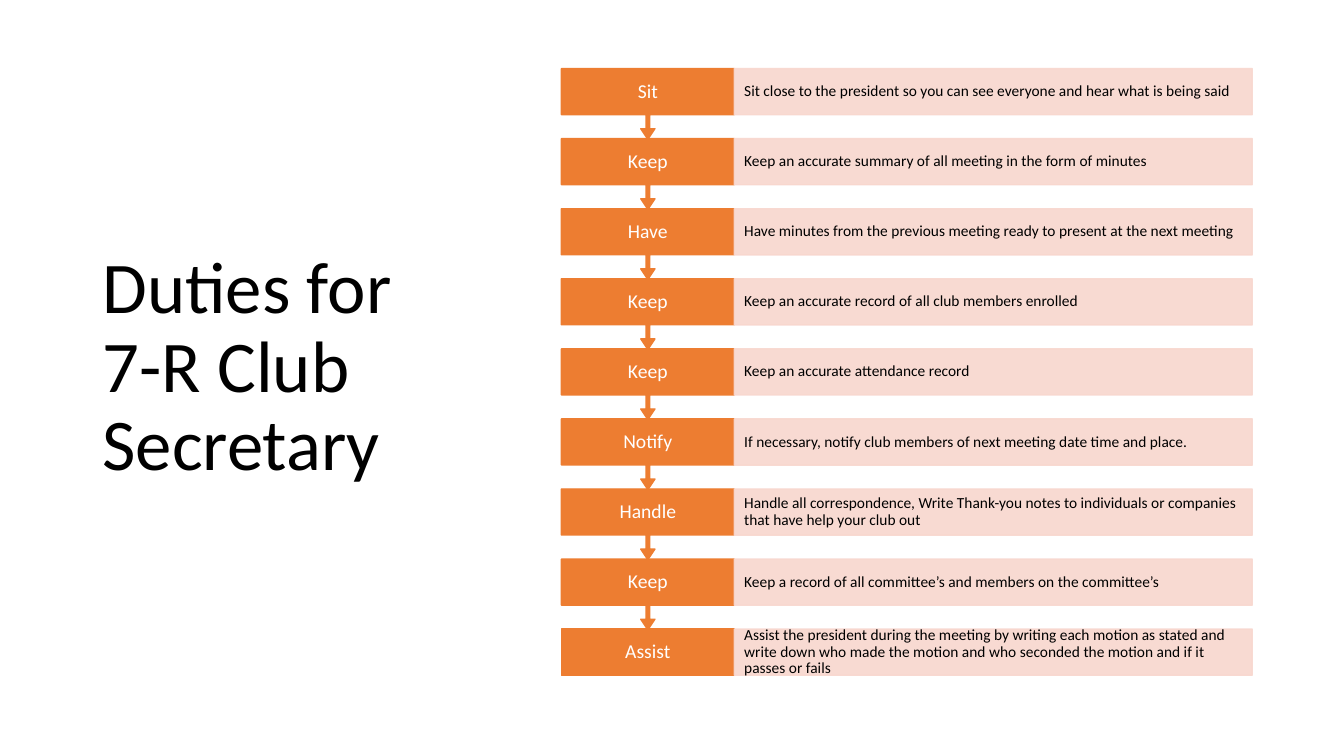
"""Build the slide on the duties of a youth club secretary."""
import pptx
import pptx.dml.color
import pptx.enum.shapes
import pptx.enum.text
import pptx.oxml
import pptx.oxml.ns
import pptx.util

Pt = pptx.util.Pt
RGB = pptx.dml.color.RGBColor.from_string
SHAPE = pptx.enum.shapes.MSO_SHAPE
ALIGN = pptx.enum.text.PP_ALIGN

HEADING = "Duties for 7-R Club Secretary"
DUTIES = [
    ("Sit", "Sit close to the president so you can see everyone and hear what is being said"),
    ("Keep", "Keep an accurate summary of all meeting in the form of minutes"),
    ("Have", "Have minutes from the previous meeting ready to present at the next meeting"),
    ("Keep", "Keep an accurate record of all club members enrolled"),
    ("Keep", "Keep an accurate attendance record"),
    ("Notify", "If necessary, notify club members of next meeting date time and place."),
    ("Handle", "Handle all correspondence, Write Thank-you notes to individuals or companies "
               "that have help your club out"),
    ("Keep", "Keep a record of all committee’s and members on the committee’s"),
    ("Assist", "Assist the president during the meeting by writing each motion as stated and write "
               "down who made the motion and who seconded the motion and if it passes or fails"),
]

THEME = {
    "font": "Calibri",
    "accent": "ED7D31", "tint": "F8D7CE", "tint_alpha": 90,
    "heading": {"size": 52, "color": "000000", "align": ALIGN.LEFT, "margins": (7.2, 3.6)},
    "verb": {"size": 14, "color": "FFFFFF", "align": ALIGN.CENTER, "margins": (8.64, 7.92)},
    "detail": {"size": 11, "color": "000000", "align": ALIGN.LEFT, "margins": (7.2, 10.8)},
}
HEADING_BOX = {"left": 66, "top": 44, "width": 266, "height": 438.5}
VERB_LEFT, VERB_WIDTH = 401, 123.5
DETAIL_LEFT, DETAIL_WIDTH = VERB_LEFT + VERB_WIDTH, 370
FIRST_TOP, PITCH, BOX_HEIGHT = 49, 50.05, 33
CALLOUT_HEIGHT = 50.5
CALLOUT_ADJUSTMENTS = (0.05, 0.1, 0.15, 0.65)


def set_all(target, values):
    """Set every attribute in the dict on the target."""
    for attribute, value in values.items():
        setattr(target, attribute, value)


def write(holder, wording, role):
    """Put wording in a shape, styled by its role in the theme."""
    style = THEME[role]
    side, end = map(Pt, style["margins"])
    frame = holder.text_frame
    frame.text = wording
    set_all(frame, {
        "word_wrap": True, "auto_size": pptx.enum.text.MSO_AUTO_SIZE.NONE,
        "vertical_anchor": pptx.enum.text.MSO_ANCHOR.MIDDLE,
        "margin_left": side, "margin_right": side, "margin_top": end, "margin_bottom": end,
    })
    line = frame.paragraphs[0]
    set_all(line, {"alignment": style["align"], "line_spacing": 0.9})
    font = line.runs[0].font
    set_all(font, {"name": THEME["font"], "size": Pt(style["size"])})
    font.color.rgb = RGB(style["color"])


def add_block(slide, kind, box, color, alpha=100):
    """Add a flat shape with fill and outline in one colour."""
    block = slide.shapes.add_shape(kind, *map(Pt, box))
    block.shadow.inherit = False
    block.fill.solid()
    block.line.width = Pt(1)
    for paint in (block.fill.fore_color, block.line.color):
        paint.rgb = RGB(color)
    if alpha < 100:
        for tone in block.element.spPr.iter(pptx.oxml.ns.qn("a:srgbClr")):
            opacity = pptx.oxml.parse_xml(
                f'<a:alpha {pptx.oxml.ns.nsdecls("a")} val="{alpha * 1000}"/>')
            tone.append(opacity)
    return block


def add_duty(slide, index, verb, sentence):
    """Add one row: the verb with its arrow to the next row, and the sentence."""
    top = FIRST_TOP + index * PITCH
    verb_box = (VERB_LEFT, top, VERB_WIDTH, BOX_HEIGHT)
    if index == len(DUTIES) - 1:
        label = add_block(slide, SHAPE.RECTANGLE, verb_box, THEME["accent"])
    else:
        callout = add_block(slide, SHAPE.UP_ARROW_CALLOUT,
                            (VERB_LEFT, top, VERB_WIDTH, CALLOUT_HEIGHT), THEME["accent"])
        callout.rotation = 180
        for position, value in enumerate(CALLOUT_ADJUSTMENTS):
            callout.adjustments[position] = value
        label = slide.shapes.add_textbox(*map(Pt, verb_box))
    write(label, verb, "verb")
    detail = add_block(slide, SHAPE.RECTANGLE, (DETAIL_LEFT, top, DETAIL_WIDTH, BOX_HEIGHT),
                       THEME["tint"], THEME["tint_alpha"])
    write(detail, sentence, "detail")


def main():
    """Create the presentation and save it."""
    deck = pptx.Presentation()
    set_all(deck, {"slide_width": Pt(960), "slide_height": Pt(540)})
    slide = deck.slides.add_slide(deck.slide_layouts.get_by_name("Title Only"))
    heading = slide.shapes.title
    set_all(heading, {side: Pt(length) for side, length in HEADING_BOX.items()})
    write(heading, HEADING, "heading")
    for index, (verb, sentence) in reversed(list(enumerate(DUTIES))):
        add_duty(slide, index, verb, sentence)
    deck.save("out.pptx")


if __name__ == "__main__":
    main()
